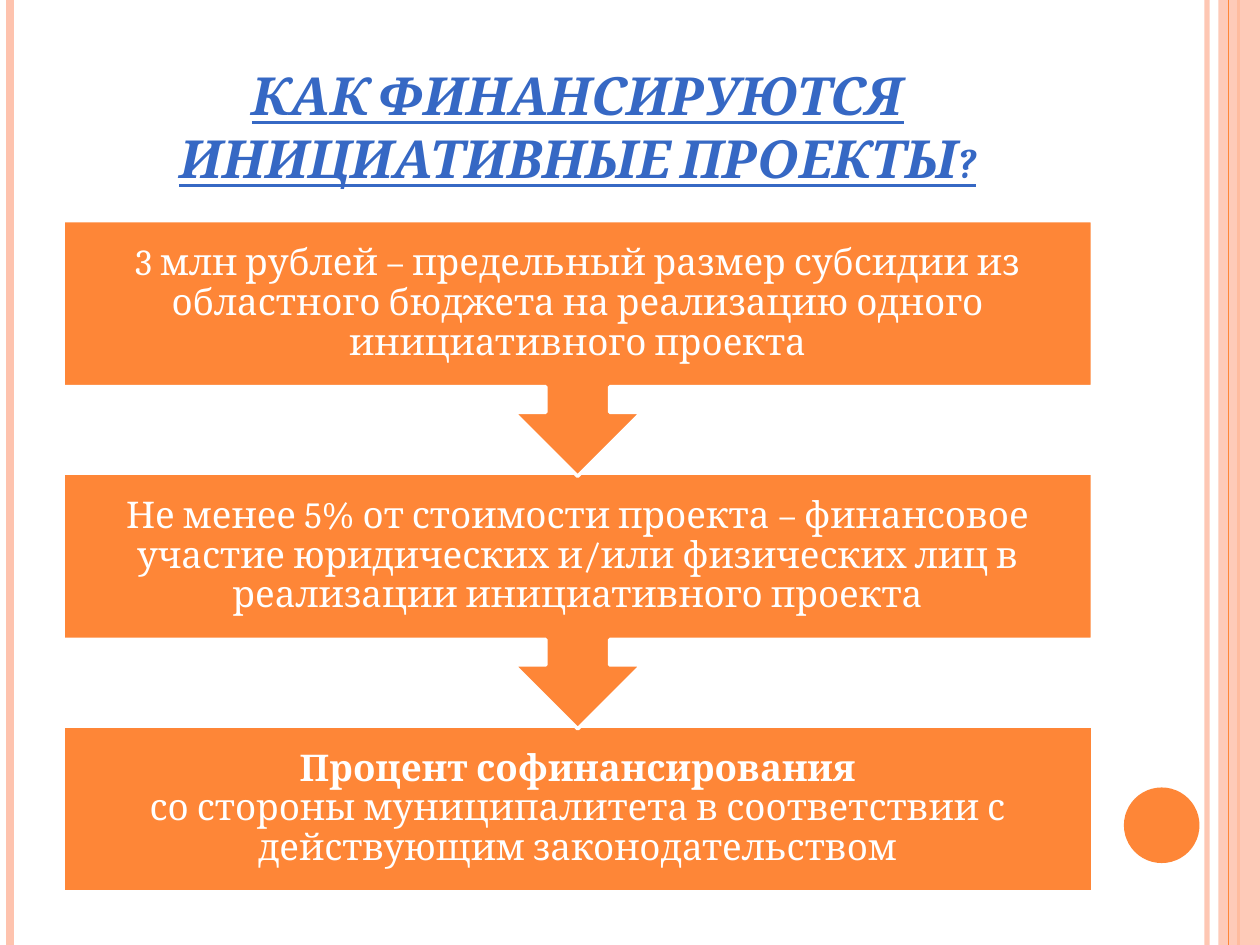
from lxml import etree
from pptx import Presentation
from pptx.dml.color import RGBColor
from pptx.enum.shapes import MSO_CONNECTOR, MSO_SHAPE
from pptx.enum.text import MSO_ANCHOR, PP_ALIGN
from pptx.oxml.ns import qn
from pptx.util import Inches, Pt

STRAIGHT = MSO_CONNECTOR.STRAIGHT
RECTANGLE = MSO_SHAPE.RECTANGLE
OVAL = MSO_SHAPE.OVAL
ARROW_CALLOUT = MSO_SHAPE.UP_ARROW_CALLOUT
CENTER = PP_ALIGN.CENTER
MIDDLE, BOTTOM = MSO_ANCHOR.MIDDLE, MSO_ANCHOR.BOTTOM

COLORS = {"orange": "FE8637", "peach": "FEC3AE", "blue": "3668C4", "white": "FFFFFF"}
FONT = "Cambria"


class SlideBuilder:
    def __init__(self, slide):
        self.slide = slide

    def paint(self, color_format, color, opacity=100):
        color_format.rgb = RGBColor.from_string(COLORS[color])

    def fade(self, properties, opacity):
        """Set the opacity, in percent, of the first colour in the properties."""
        if opacity < 100:
            color = next(properties.iter(qn("a:srgbClr")))
            etree.SubElement(color, qn("a:alpha"), val=str(opacity * 1000))

    def stripe(self, x, color, width, opacity=100):
        line = self.slide.shapes.add_connector(
            STRAIGHT, Inches(x), 0, Inches(x), Inches(7.5))
        self.paint(line.line.color, color)
        line.line.width = Pt(width)
        properties = line._element.spPr
        self.fade(properties, opacity)
        etree.SubElement(properties, qn("a:effectLst"))

    def shape(self, kind, box, color, opacity=100, outline=None, rotation=0):
        shape = self.slide.shapes.add_shape(kind, *map(Inches, box))
        shape.shadow.inherit = False
        shape.rotation = rotation
        shape.fill.solid()
        self.paint(shape.fill.fore_color, color)
        self.fade(shape._element.spPr, opacity)
        if outline:
            self.paint(shape.line.color, outline)
            shape.line.width = Pt(2)
        else:
            shape.line.fill.background()

    def text(self, box, lines, size, color, anchor, inset=None, spacing=None,
             italic=False, underline=False, small_caps=False):
        """Write (text, bold) lines as one centred paragraph."""
        frame = self.slide.shapes.add_textbox(*map(Inches, box)).text_frame
        frame.word_wrap = True
        frame.vertical_anchor = anchor
        if inset is not None:
            frame.margin_left = frame.margin_right = Inches(inset)
            frame.margin_top = frame.margin_bottom = Inches(inset)
        paragraph = frame.paragraphs[0]
        paragraph.alignment = CENTER
        paragraph.line_spacing = spacing
        for index, (words, bold) in enumerate(lines):
            if index:
                paragraph.add_line_break()
            run = paragraph.add_run()
            run.text = words
            font = run.font
            font.name, font.size = FONT, Pt(size)
            font.bold, font.italic, font.underline = bold, italic, underline
            self.paint(font.color, color)
            if small_caps:
                run._r.get_or_add_rPr().set("cap", "small")


def main():
    presentation = Presentation()
    presentation.slide_width, presentation.slide_height = Inches(10), Inches(7.5)
    builder = SlideBuilder(presentation.slides.add_slide(presentation.slide_layouts[6]))

    # Side stripes and corner circle
    builder.stripe(9.58, "peach", 3, opacity=93)
    builder.stripe(0.08, "peach", 4.5)
    builder.stripe(9.83, "orange", 1.5)
    builder.shape(RECTANGLE, (9.67, 0, 0.33, 7.5), "peach", opacity=87)
    builder.stripe(9.75, "orange", 0.75)
    builder.shape(OVAL, (8.92, 6.25, 0.6, 0.6), "orange")

    # Title
    builder.text((0.5, 0.3, 8.17, 1.25),
                 [("КАК ФИНАНСИРУЮТСЯ", True), ("ИНИЦИАТИВНЫЕ ПРОЕКТЫ?", True)],
                 30, "blue", BOTTOM, italic=True, underline=True, small_caps=True)

    # Funding steps, stacked from the last one up so each arrow lies on the next box
    steps = [
        [("3 млн рублей – предельный размер субсидии из областного бюджета "
          "на реализацию одного инициативного проекта", False)],
        [("Не менее 5% от стоимости проекта – финансовое участие юридических "
          "и/или физических лиц в реализации инициативного проекта", False)],
        [("Процент софинансирования", True),
         ("со стороны муниципалитета в соответствии с действующим "
          "законодательством", False)],
    ]
    left, first_top, pitch, width = 0.5, 1.75, 2.005, 8.17
    box_height, callout_height = 1.32, 2.03
    last = len(steps) - 1
    for index in range(last, -1, -1):
        top = first_top + index * pitch
        if index == last:
            builder.shape(RECTANGLE, (left, top, width, box_height), "orange",
                          outline="white")
        else:
            builder.shape(ARROW_CALLOUT, (left, top, width, callout_height), "orange",
                          outline="white", rotation=180)
        builder.text((left, top, width, box_height), steps[index], 21, "white",
                     MIDDLE, inset=0.16, spacing=0.9)

    presentation.save("out.pptx")


if __name__ == "__main__":
    main()
